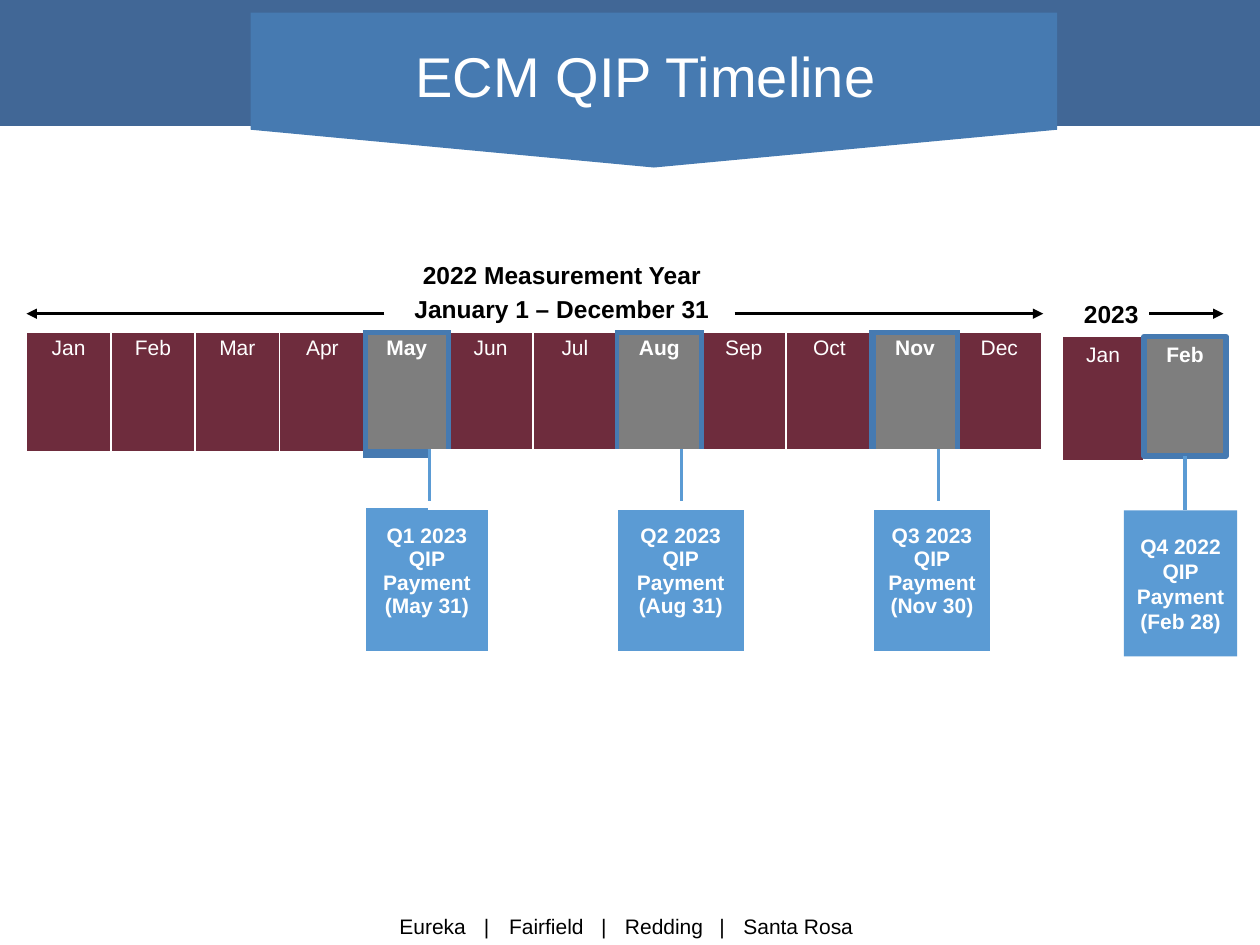
from lxml import etree
from pptx import Presentation
from pptx.dml.color import RGBColor
from pptx.enum import shapes, text
from pptx.oxml import ns
from pptx.util import Inches, Pt

COLORS = {
    "band": "416796",
    "banner": "467AB1",
    "month": "6E2C3D",
    "payout": "7E7E7E",
    "payment": "5B9BD4",
    "white": "FFFFFF",
    "black": "000000",
}
MONTHS = [
    ("Jan", 1), ("Feb", 1), ("Mar", 1), ("Apr", 1), ("May", 2), ("Jun", 2),
    ("Jul", 1), ("Aug", 2), ("Sep", 2), ("Oct", 1), ("Nov", 2), ("Dec", 2),
]
PAYOUT_MONTHS = {"May", "Aug", "Nov"}
COLUMNS = [0.67, 0.67, 0.67, 0.68, 0.51, 0.15, 0.32, 0.35, 0.67,
           0.51, 0.16, 0.34, 0.33, 0.69, 0.52, 0.15, 0.27, 0.4]
ROWS = [0.96, 0.41, 1.16]
PAYMENTS = {
    4: ["Q1 2023 QIP", "Payment (May 31)"],
    9: ["Q2 2023 QIP", "Payment (Aug 31)"],
    14: ["Q3 2023 QIP", "Payment (Nov 30)"],
}


def rgb(name):
    return RGBColor.from_string(COLORS[name])


def write(frame, lines, size, color, bold=False, align=text.PP_ALIGN.CENTER):
    frame.word_wrap = True
    frame.text = "\n".join(lines)
    for para in frame.paragraphs:
        para.alignment = align
        for span in para.runs:
            span.font.name = "Arial"
            span.font.size = Pt(size)
            span.font.bold = bold
            span.font.color.rgb = rgb(color)


def set_margins(target, side, top):
    target.margin_left = target.margin_right = Inches(side)
    target.margin_top = Inches(top)
    target.margin_bottom = 0


def add_text(page, left, top, width, height, lines, size, color, **style):
    box = page.shapes.add_textbox(Inches(left), Inches(top), Inches(width), Inches(height))
    set_margins(box.text_frame, 0, 0.01)
    write(box.text_frame, lines, size, color, **style)
    return box.text_frame


def paint(shape, fill, line=None, width=1):
    shape.shadow.inherit = False
    shape.fill.solid()
    shape.fill.fore_color.rgb = rgb(fill)
    if line:
        shape.line.color.rgb = rgb(line)
        shape.line.width = Pt(width)
    else:
        shape.line.fill.background()


def add_block(page, left, top, width, height, fill, line=None, line_width=1):
    block = page.shapes.add_shape(shapes.MSO_SHAPE.RECTANGLE, Inches(left), Inches(top),
                                  Inches(width), Inches(height))
    paint(block, fill, line, line_width)
    return block


def add_line(page, x1, y1, x2, y2, color, width, arrow=False):
    line = page.shapes.add_connector(shapes.MSO_CONNECTOR.STRAIGHT, Inches(x1), Inches(y1),
                                     Inches(x2), Inches(y2))
    line.line.color.rgb = rgb(color)
    line.line.width = Pt(width)
    if arrow:
        etree.SubElement(line.line._get_or_add_ln(), ns.qn("a:tailEnd"), type="triangle")
    etree.SubElement(line._element.spPr, ns.qn("a:effectLst"))
    return line


def set_borders(cell, **borders):
    props = cell._tc.get_or_add_tcPr()
    sides = [side for side in "LRTB" if side in borders]
    for index, side in enumerate(sides):
        color, width = borders[side]
        line = etree.Element(ns.qn(f"a:ln{side}"), w=str(Pt(width)))
        fill = etree.SubElement(line, ns.qn("a:solidFill"))
        etree.SubElement(fill, ns.qn("a:srgbClr"), val=COLORS[color])
        props.insert(index, line)


def fill_cell(cell, fill, lines, bold, side, top):
    set_margins(cell, side, top)
    cell.fill.solid()
    cell.fill.fore_color.rgb = rgb(fill)
    write(cell.text_frame, lines, 12, "white", bold)


def add_header(page, left, top, width, height):
    add_block(page, left, top, width, height, "band")
    builder = page.shapes.build_freeform(Inches(1.99), Inches(0.1))
    corners = [(8.39, 0.1), (8.39, 1.03), (5.19, 1.33), (1.99, 1.03)]
    builder.add_line_segments([(Inches(x), Inches(y)) for x, y in corners], close=True)
    paint(builder.convert_to_shape(), "banner")
    add_text(page, 3.19, 0.32, 3.87, 0.56, ["ECM QIP Timeline"], 32, "white")


def fill_months(table):
    column = 0
    for index, (month, span) in enumerate(MONTHS):
        near = [name in PAYOUT_MONTHS for name, _ in MONTHS[max(index - 1, 0):index + 2]]
        payout = month in PAYOUT_MONTHS
        before = index > 0 and near[0]
        cell = table.cell(0, column)
        if span > 1:
            cell.merge(table.cell(0, column + span - 1))
        blue, white = ("banner", 3), ("white", 1)
        thick = ("banner", 4.5)
        set_borders(
            cell,
            L=thick if month == "Nov" else blue if payout or before else white,
            R=thick if month == "Oct" else blue if payout or near[-1] else white,
            T=blue if payout else white,
            B=("banner", 6) if payout else ("white", 3),
        )
        fill_cell(cell, "payout" if payout else "month", [month], payout, 0, 0.03)
        column += span


def fill_links(table):
    link = ("payment", 2.25)
    for start, end, top in [(0, 4, 3), (5, 9, 6), (10, 14, 6), (15, 17, 6)]:
        cell = table.cell(1, start)
        cell.merge(table.cell(1, end))
        borders = {"T": ("white", top)}
        if start > 0:
            borders["L"] = link
        if end < len(COLUMNS) - 1:
            borders["R"] = link
        set_borders(cell, **borders)


def add_year(page, left, top, width, height):
    frame = page.shapes.add_table(len(ROWS), len(COLUMNS), Inches(left), Inches(top),
                                  Inches(width), Inches(height))
    table = frame.table
    table.first_row = table.horz_banding = False
    for column, size in zip(table.columns, COLUMNS):
        column.width = Inches(size)
    for row, size in zip(table.rows, ROWS):
        row.height = Inches(size)
    for cell in table.iter_cells():
        set_margins(cell, 0, 0)
        cell.fill.background()
    fill_months(table)
    fill_links(table)
    for column, lines in PAYMENTS.items():
        cell = table.cell(2, column)
        cell.merge(table.cell(2, column + 2))
        fill_cell(cell, "payment", lines, True, 0.1, 0.15)

    title = add_text(page, 3.23, 2.05, 2.46, 0.52,
                     ["2022 Measurement Year", "January 1 – December 31"], 14, "black", bold=True)
    title.paragraphs[1].space_before = Pt(3)
    add_line(page, 3.05, 2.49, left, 2.49, "black", 1.56, arrow=True)
    add_line(page, 5.83, 2.49, 8.28, 2.49, "black", 1.56, arrow=True)


def add_next_year(page, left, top, width):
    add_text(page, 8.57, 2.36, 0.5, 0.26, ["2023"], 14, "black", bold=True)
    add_line(page, 9.12, 2.49, 9.71, 2.49, "black", 1.56, arrow=True)
    january = add_block(page, left, top, width, 0.99, "month", "white")
    february = add_block(page, left + width, top, width, 0.95, "payout", "banner", 3)
    for block, month, bold in [(january, "Jan", False), (february, "Feb", True)]:
        set_margins(block.text_frame, 0, 0.04)
        block.text_frame.vertical_anchor = text.MSO_ANCHOR.TOP
        write(block.text_frame, [month], 12, "white", bold)

    payment = add_block(page, 8.92, 4.05, 0.9, 1.16, "payment")
    set_margins(payment.text_frame, 0.08, 0)
    payment.text_frame.vertical_anchor = text.MSO_ANCHOR.MIDDLE
    write(payment.text_frame, ["Q4 2022 QIP", "Payment (Feb 28)"], 12, "white", True)
    for para in payment.text_frame.paragraphs:
        para.line_spacing = Pt(14.3)
    middle = left + width * 1.5
    link = add_line(page, middle, top + 0.95, middle, 4.05, "payment", 2.04)
    link.begin_connect(february, 2)


def add_footer(page, left, top, width, height):
    frame = add_text(page, left, top, width, height,
                     ["Eureka\t|\tFairfield\t|\tRedding\t|\tSanta Rosa"], 12, "black",
                     align=text.PP_ALIGN.LEFT)
    tabs = etree.SubElement(frame.paragraphs[0]._p.get_or_add_pPr(), ns.qn("a:tabLst"))
    for stop in [0.67, 0.87, 1.6, 1.79, 2.54, 2.73]:
        etree.SubElement(tabs, ns.qn("a:tab"), pos=str(Inches(stop)), algn="l")


def main():
    deck = Presentation()
    deck.slide_width, deck.slide_height = Inches(10), Inches(7.5)
    page = deck.slides.add_slide(deck.slide_layouts[6])
    add_header(page, 0, 0, 10, 1)
    add_year(page, 0.21, 2.64, sum(COLUMNS), sum(ROWS))
    add_next_year(page, 8.43, 2.67, 0.65)
    add_footer(page, 3.17, 7.24, 3.61, 0.21)
    deck.save("out.pptx")


if __name__ == "__main__":
    main()
